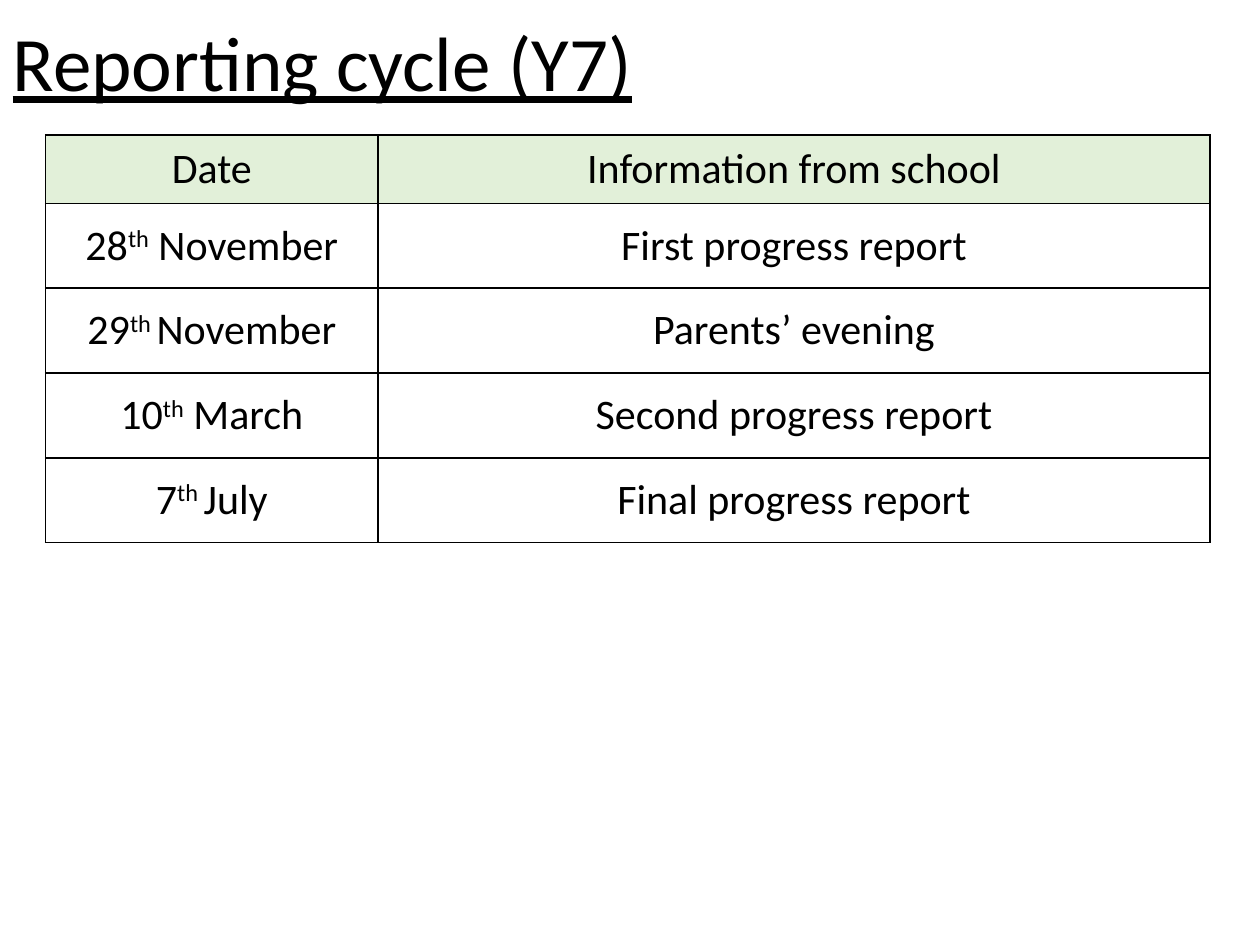
import lxml.etree
import pptx
import pptx.dml.color
import pptx.enum.text
import pptx.oxml.ns
import pptx.util

Cm = pptx.util.Cm
Pt = pptx.util.Pt
BLACK = pptx.dml.color.RGBColor(0x00, 0x00, 0x00)
PALE_GREEN = pptx.dml.color.RGBColor(0xE2, 0xF0, 0xD9)
MIDDLE = pptx.enum.text.MSO_ANCHOR.MIDDLE
ALIGN = pptx.enum.text.PP_ALIGN

TITLE_FONT = {"name": "Calibri", "size": Pt(44), "underline": True, "bold": False}
CELL_FONT = {"name": "Calibri", "size": Pt(24), "bold": False}
SUPERSCRIPT = "30000"

# Each cell is a list of (text, baseline) runs.
REPORTING_CYCLE = [
    ([("Date", None)], "Information from school"),
    ([("28", None), ("th", SUPERSCRIPT), (" November", None)], "First progress report"),
    ([("29", None), ("th ", SUPERSCRIPT), ("November", None)], "Parents’ evening"),
    ([("10", None), ("th", SUPERSCRIPT), (" March", None)], "Second progress report"),
    ([("7", None), ("th ", SUPERSCRIPT), ("July", None)], "Final progress report"),
]
COLUMN_WIDTHS = [Cm(6.7), Cm(16.77)]
HEADER_HEIGHT, ROW_HEIGHT = Cm(1.38), Cm(1.71)


def add_run(paragraph, text, font_format):
    run = paragraph.add_run()
    run.text = text
    for attribute, value in font_format.items():
        setattr(run.font, attribute, value)
    run.font.color.rgb = BLACK
    return run


def add_borders(cell):
    properties = cell._tc.get_or_add_tcPr()
    for position, side in enumerate(("lnL", "lnR", "lnT", "lnB")):
        line = lxml.etree.Element(pptx.oxml.ns.qn(f"a:{side}"), w=str(Pt(1)))
        fill = lxml.etree.SubElement(line, pptx.oxml.ns.qn("a:solidFill"))
        lxml.etree.SubElement(fill, pptx.oxml.ns.qn("a:srgbClr"), val=str(BLACK))
        properties.insert(position, line)


presentation = pptx.Presentation()
presentation.slide_width, presentation.slide_height = Cm(25.4), Cm(19.05)
slide = presentation.slides.add_slide(presentation.slide_layouts[5])

title = slide.shapes.title
title.left, title.top, title.width, title.height = Cm(0), Cm(0), Cm(21.9), Cm(2.7)
title.text_frame.vertical_anchor = MIDDLE
heading = title.text_frame.paragraphs[0]
heading.alignment = ALIGN.LEFT
heading.line_spacing = 0.9
add_run(heading, "Reporting cycle (Y7)", TITLE_FONT)

schedule = slide.shapes.add_table(
    len(REPORTING_CYCLE), len(COLUMN_WIDTHS), Cm(0.92), Cm(2.72),
    sum(COLUMN_WIDTHS), HEADER_HEIGHT + ROW_HEIGHT * (len(REPORTING_CYCLE) - 1),
).table
schedule.horz_banding = False
for column, width in zip(schedule.columns, COLUMN_WIDTHS):
    column.width = width

for row_index, (date_runs, information) in enumerate(REPORTING_CYCLE):
    is_header = row_index == 0
    schedule.rows[row_index].height = HEADER_HEIGHT if is_header else ROW_HEIGHT
    for column_index, runs in enumerate((date_runs, [(information, None)])):
        cell = schedule.cell(row_index, column_index)
        cell.vertical_anchor = MIDDLE
        if is_header:
            cell.fill.solid()
            cell.fill.fore_color.rgb = PALE_GREEN
        else:
            cell.fill.background()
        add_borders(cell)
        paragraph = cell.text_frame.paragraphs[0]
        paragraph.alignment = ALIGN.CENTER
        for text, baseline in runs:
            run = add_run(paragraph, text, CELL_FONT)
            if baseline:
                run._r.get_or_add_rPr().set("baseline", baseline)

presentation.save("out.pptx")
